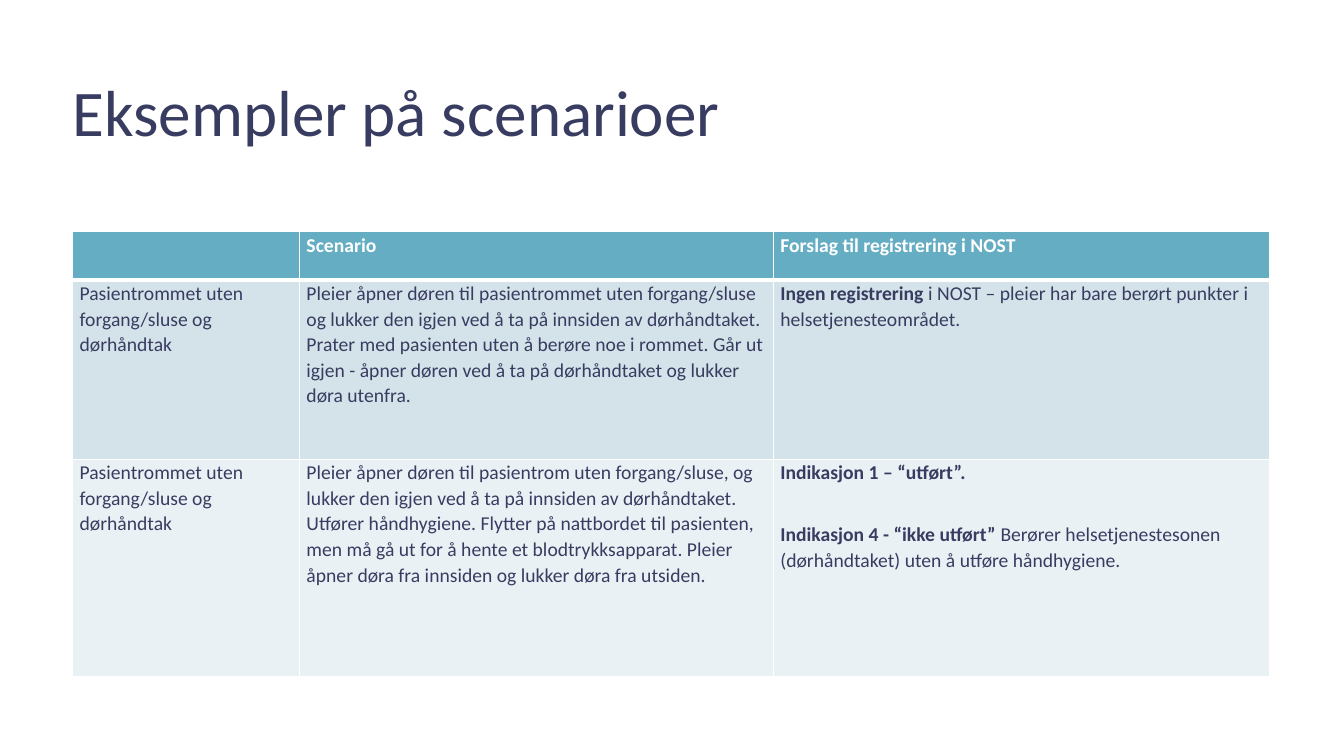
"""Builds a slide with a table of hand hygiene scenarios and how to register them."""
from lxml import etree
from pptx import Presentation
from pptx.dml.color import RGBColor
from pptx.enum.text import MSO_ANCHOR
from pptx.oxml.ns import qn
from pptx.util import Inches, Pt

TOP = MSO_ANCHOR.TOP
MIDDLE = MSO_ANCHOR.MIDDLE

TITLE = "Eksempler på scenarioer"
ROOM = "Pasientrommet uten forgang/sluse og dørhåndtak"
HEADER = ["", "Scenario", "Forslag til registrering i NOST"]
SCENARIOS = [
    (
        ROOM,
        "Pleier åpner døren til pasientrommet uten forgang/sluse og lukker den igjen "
        "ved å ta på innsiden av dørhåndtaket. Prater med pasienten uten å berøre noe "
        "i rommet. Går ut igjen - åpner døren ved å ta på dørhåndtaket og lukker døra "
        "utenfra.",
        [("Ingen registrering ",
          "i NOST – pleier har bare berørt punkter i helsetjenesteområdet.")],
    ),
    (
        ROOM,
        "Pleier åpner døren til pasientrom uten forgang/sluse, og lukker den igjen ved "
        "å ta på innsiden av dørhåndtaket. Utfører håndhygiene. Flytter på nattbordet "
        "til pasienten, men må gå ut for å hente et blodtrykksapparat. Pleier åpner "
        "døra fra innsiden og lukker døra fra utsiden.",
        [("Indikasjon 1 – “utført”.", ""),
         ("Indikasjon 4 - “ikke utført” ",
          "Berører helsetjenestesonen (dørhåndtaket) uten å utføre håndhygiene.")],
    ),
]

THEME = {
    "font": "Calibri", "title_size": 46.5, "table_size": 14,
    "ink": "393C61", "white": "FFFFFF",
    "row_fills": ["65ADC3", "D3E3E9", "EAF1F5"],
}
LEFT, WIDTH = 0.72, 11.88
COLUMN_WIDTHS = [2.25, 4.7, 4.92]
ROW_HEIGHTS = [0.48, 1.78, 2.15]


def write_text(frame, paragraphs, size, color, line_spacing, after=0, gap=0):
    """Write paragraphs given as (bold part, plain part) pairs."""
    for index, parts in enumerate(paragraphs):
        paragraph = frame.add_paragraph() if index else frame.paragraphs[0]
        paragraph.line_spacing = line_spacing
        paragraph.space_before = Pt(gap if index else 0)
        paragraph.space_after = Pt(after)
        for text, bold in zip(parts, (True, False)):
            if text:
                run = paragraph.add_run()
                run.text = text
                run.font.name = THEME["font"]
                run.font.size = Pt(size)
                run.font.bold = bold
                run.font.color.rgb = RGBColor.from_string(color)


def set_borders(cell, widths):
    """Draw white cell borders from widths in points by side."""
    properties = cell._tc.get_or_add_tcPr()
    for side, width in widths.items():
        line = etree.SubElement(properties, qn(f"a:ln{side}"), w=str(Pt(width)))
        fill = etree.SubElement(line, qn("a:solidFill"))
        etree.SubElement(fill, qn("a:srgbClr"), val=THEME["white"])


def add_title(slide):
    """Add the slide title."""
    box = slide.shapes.add_textbox(Inches(LEFT), Inches(0.79), Inches(WIDTH), Inches(0.7))
    frame = box.text_frame
    frame.word_wrap = True
    frame.vertical_anchor = MIDDLE
    frame.margin_left = frame.margin_right = frame.margin_top = frame.margin_bottom = 0
    write_text(frame, [("", TITLE)], THEME["title_size"], THEME["ink"], 0.9)


def add_scenario_table(slide):
    """Add the table with its header and scenarios."""
    rows = [[[(text, "")] for text in HEADER]]
    rows += [[[("", room)], [("", story)], advice] for room, story, advice in SCENARIOS]
    table = slide.shapes.add_table(
        len(rows), len(HEADER), Inches(LEFT), Inches(2.3),
        Inches(WIDTH), Inches(sum(ROW_HEIGHTS))).table
    for column, width in zip(table.columns, COLUMN_WIDTHS):
        column.width = Inches(width)
    for row_index, cells in enumerate(rows):
        table.rows[row_index].height = Inches(ROW_HEIGHTS[row_index])
        color = THEME["ink"] if row_index else THEME["white"]
        borders = {"L": 1, "R": 1, "T": 3 if row_index == 1 else 1,
                   "B": 1 if row_index else 3}
        for column_index, paragraphs in enumerate(cells):
            cell = table.cell(row_index, column_index)
            set_borders(cell, borders)
            cell.fill.solid()
            cell.fill.fore_color.rgb = RGBColor.from_string(THEME["row_fills"][row_index])
            cell.margin_left = cell.margin_right = Inches(0.07)
            cell.margin_top = cell.margin_bottom = 0
            cell.vertical_anchor = TOP
            write_text(cell.text_frame, paragraphs, THEME["table_size"], color,
                       1.07, after=8, gap=18)


def main():
    """Build and save the presentation."""
    presentation = Presentation()
    presentation.slide_width, presentation.slide_height = Inches(13.33), Inches(7.5)
    slide = presentation.slides.add_slide(presentation.slide_layouts[6])
    add_title(slide)
    add_scenario_table(slide)
    presentation.save("out.pptx")


if __name__ == "__main__":
    main()
